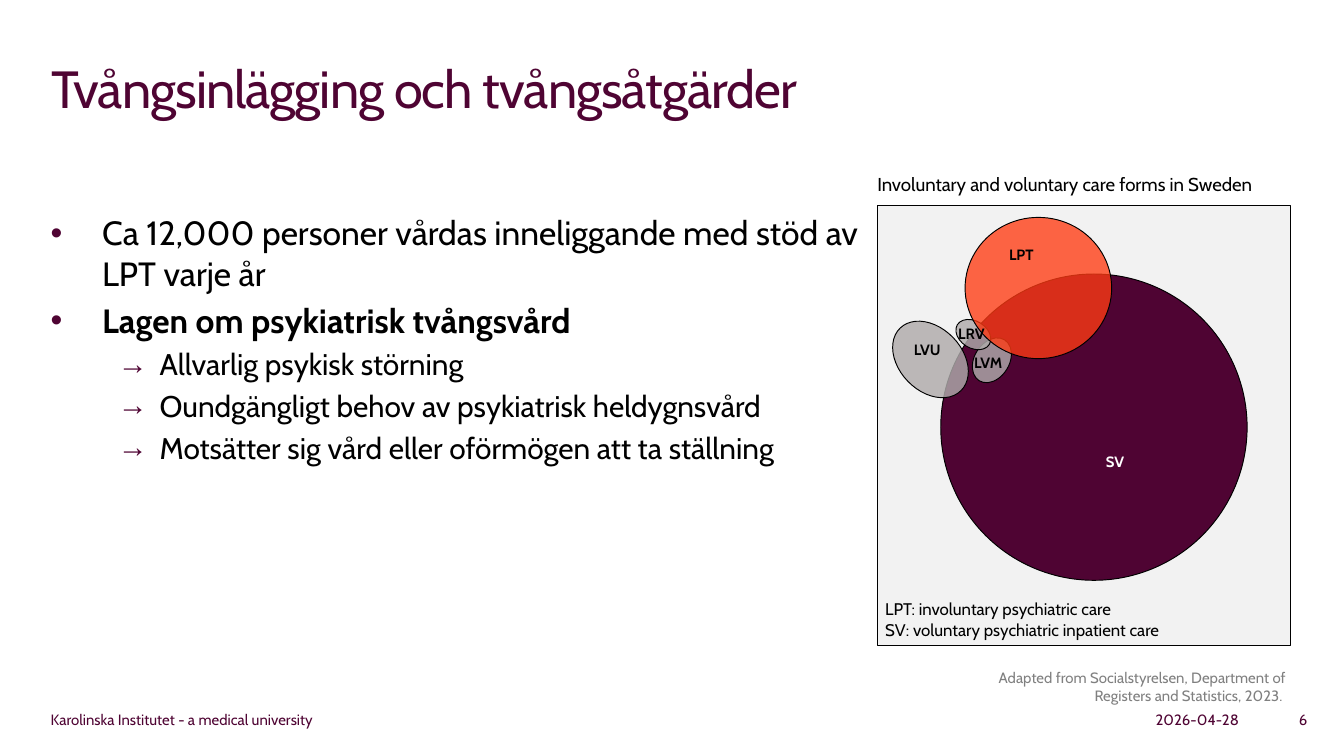
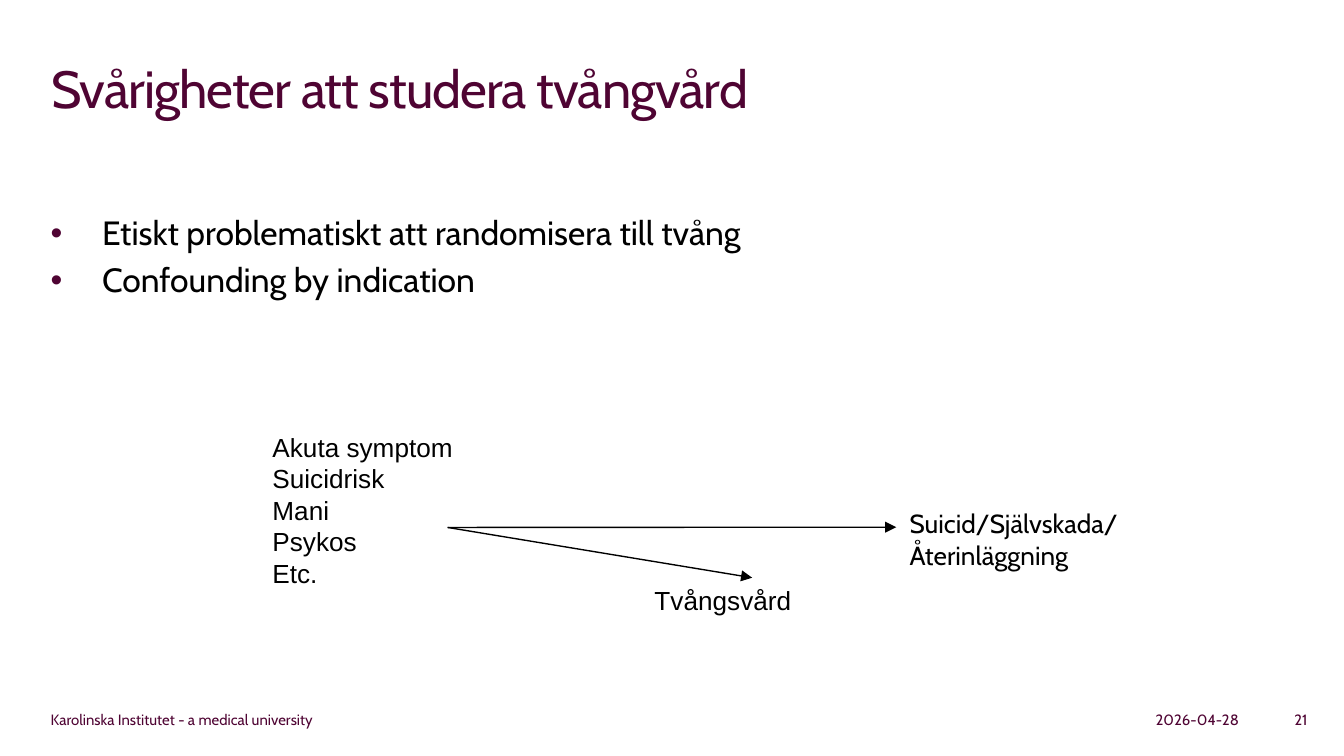
from lxml import etree
from pptx import Presentation
from pptx.dml.color import RGBColor
from pptx.enum.shapes import MSO_CONNECTOR, MSO_SHAPE
from pptx.enum.text import MSO_ANCHOR, MSO_AUTO_SIZE, PP_ALIGN
from pptx.oxml.ns import qn
from pptx.util import Cm, Pt

LEFT, RIGHT = PP_ALIGN.LEFT, PP_ALIGN.RIGHT
TOP = MSO_ANCHOR.TOP
FIXED, GROW = MSO_AUTO_SIZE.NONE, MSO_AUTO_SIZE.SHAPE_TO_FIT_TEXT
RECTANGLE, OVAL = MSO_SHAPE.RECTANGLE, MSO_SHAPE.OVAL
STRAIGHT = MSO_CONNECTOR.STRAIGHT

PLUM = RGBColor(0x4F, 0x04, 0x33)
BLACK = RGBColor(0, 0, 0)
WHITE = RGBColor(0xFF, 0xFF, 0xFF)
GREY = RGBColor(0x80, 0x80, 0x80)
PALE = RGBColor(0xF2, 0xF2, 0xF2)
STONE = RGBColor(0xAF, 0xAB, 0xAB)
ORANGE = RGBColor(0xFF, 0x3B, 0x13)

BULLETS = [("•", 0.97, -0.97, 18), ("→", 2.06, -0.79, 16)]


def write(paragraph, text, size=8, font="Cabin", color=BLACK, bold=False, align=LEFT):
    paragraph.alignment = align
    run = paragraph.add_run()
    run.text = text
    run.font.size = Pt(size)
    run.font.name = font
    run.font.bold = bold
    run.font.color.rgb = color
    return run


def add_text(shapes, text, box, grow=False, **style):
    area = shapes.add_textbox(*map(Cm, box))
    frame = area.text_frame
    frame.word_wrap = True
    frame.auto_size = GROW if grow else FIXED
    for index, line in enumerate(text.split("\n")):
        write(frame.add_paragraph() if index else frame.paragraphs[0], line, **style)
    return area


deck = Presentation()
deck.slide_width, deck.slide_height = Cm(25.4), Cm(14.29)

pages = [
    ("Tvångsinlägging och tvångsåtgärder", "6", 16.08, [
        (0, "Ca 12,000 personer vårdas inneliggande med stöd av LPT varje år", False),
        (0, "Lagen om psykiatrisk tvångsvård", True),
        (1, "Allvarlig psykisk störning", False),
        (1, "Oundgängligt behov av psykiatrisk heldygnsvård", False),
        (1, "Motsätter sig vård eller oförmögen att ta ställning", False),
    ]),
    ("Svårigheter att studera tvångvård", "21", 23.98, [
        (0, "Etiskt problematiskt att randomisera till tvång", False),
        (0, "Confounding by indication", False),
    ]),
]

slides = []
for heading, number, body_width, points in pages:
    slide = deck.slides.add_slide(deck.slide_layouts[5])
    slides.append(slide)
    title = slide.shapes.title
    title.left, title.top, title.width, title.height = map(Cm, (0.71, 0.94, 23.98, 2.39))
    title.text_frame.vertical_anchor = TOP
    title.text_frame.auto_size = FIXED
    title_run = write(title.text_frame.paragraphs[0], heading, size=28, color=PLUM)
    title_run.font._element.set("spc", "-50")

    body = slide.shapes.add_textbox(*map(Cm, (0.71, 3.89, body_width, 8.86))).text_frame
    body.word_wrap = True
    for index, (level, point, bold) in enumerate(points):
        mark, margin, indent, size = BULLETS[level]
        paragraph = body.add_paragraph() if index else body.paragraphs[0]
        paragraph.level = level
        properties = paragraph._p.get_or_add_pPr()
        properties.set("marL", str(Cm(margin)))
        properties.set("indent", str(Cm(indent)))
        bullet_color = etree.SubElement(properties, qn("a:buClr"))
        etree.SubElement(bullet_color, qn("a:srgbClr"), val=str(PLUM))
        etree.SubElement(properties, qn("a:buFont"), typeface="Arial")
        etree.SubElement(properties, qn("a:buChar"), char=mark)
        if index:
            paragraph.space_before = Pt(size * 0.2)
        write(paragraph, point, size=size, bold=bold)

    for text, left, width, align in [
        ("Karolinska Institutet - a medical university", 0.71, 7.8, LEFT),
        ("2026-04-28", 18.39, 5.28, RIGHT),
        (number, 23.06, 1.9, RIGHT),
    ]:
        add_text(slide.shapes, text, (left, 13.31, width, 0.48), color=PLUM, align=align)

care_slide, study_slide = slides

venn = care_slide.shapes.add_group_shape().shapes
for kind, box, rotation, color, opacity in [
    (RECTANGLE, (16.59, 3.89, 7.8, 8.31), 0, PALE, 100),
    (OVAL, (17.78, 5.18, 5.79, 5.79), 0, PLUM, 100),
    (OVAL, (16.76, 6.2, 1.65, 1.19), 46, STONE, 82),
    (OVAL, (18.29, 6.48, 0.91, 0.66), 121.8, STONE, 82),
    (OVAL, (18.14, 5.97, 0.51, 0.71), 121.8, STONE, 82),
    (OVAL, (18.24, 4.11, 2.77, 2.67), 0, ORANGE, 78),
]:
    region = venn.add_shape(kind, *map(Cm, box))
    region.shadow.inherit = False
    region.rotation = rotation
    region.fill.solid()
    region.fill.fore_color.rgb = color
    region.line.color.rgb = BLACK
    region.line.width = Pt(0.5)
    if opacity < 100:
        fill_color = region._element.spPr.find(qn("a:solidFill"))[0]
        etree.SubElement(fill_color, qn("a:alpha"), val=str(opacity * 1000))

for care_form, left, top, color in [
    ("LPT", 18.82, 4.52, BLACK),
    ("SV", 20.65, 8.43, WHITE),
    ("LVU", 17.02, 6.32, BLACK),
    ("LRV", 17.86, 6.02, BLACK),
    ("LVM", 18.16, 6.55, BLACK),
]:
    add_text(venn, care_form, (left, top, 1.4, 0.61), grow=True, color=color, bold=True)

add_text(venn, "Involuntary and voluntary care forms in Sweden",
         (16.33, 3.15, 8.31, 0.69), grow=True, size=10)
add_text(venn, "LPT: involuntary psychiatric care\nSV: voluntary psychiatric inpatient care",
         (16.48, 11.2, 7.8, 1.02), grow=True, size=9)
add_text(venn, "Adapted from Socialstyrelsen, Department of Registers and Statistics, 2023. ",
         (18.21, 12.52, 6.35, 0.94), grow=True, color=GREY, align=RIGHT)

add_text(study_slide.shapes, "Akuta symptom\nSuicidrisk\nMani\nPsykos\nEtc.",
         (4.9, 8.03, 5.41, 4.7), size=14, font="Arial")
treatment = add_text(study_slide.shapes, "Tvångsvård",
                     (12.12, 10.92, 4.19, 0.99), size=14, font="Arial")
outcome = add_text(study_slide.shapes, "Suicid/Självskada/Återinläggning",
                   (16.94, 9.47, 7.09, 0.99), size=14)

for target, side in [(outcome, 1), (treatment, 0)]:
    arrow = study_slide.shapes.add_connector(
        STRAIGHT, Cm(8.46), Cm(9.97), target.left, target.top)
    arrow.end_connect(target, side)
    arrow.line.color.rgb = BLACK
    arrow.line.width = Pt(0.75)
    etree.SubElement(arrow.line._get_or_add_ln(), qn("a:tailEnd"), type="triangle")
    etree.SubElement(arrow._element.spPr, qn("a:effectLst"))

deck.save("out.pptx")
